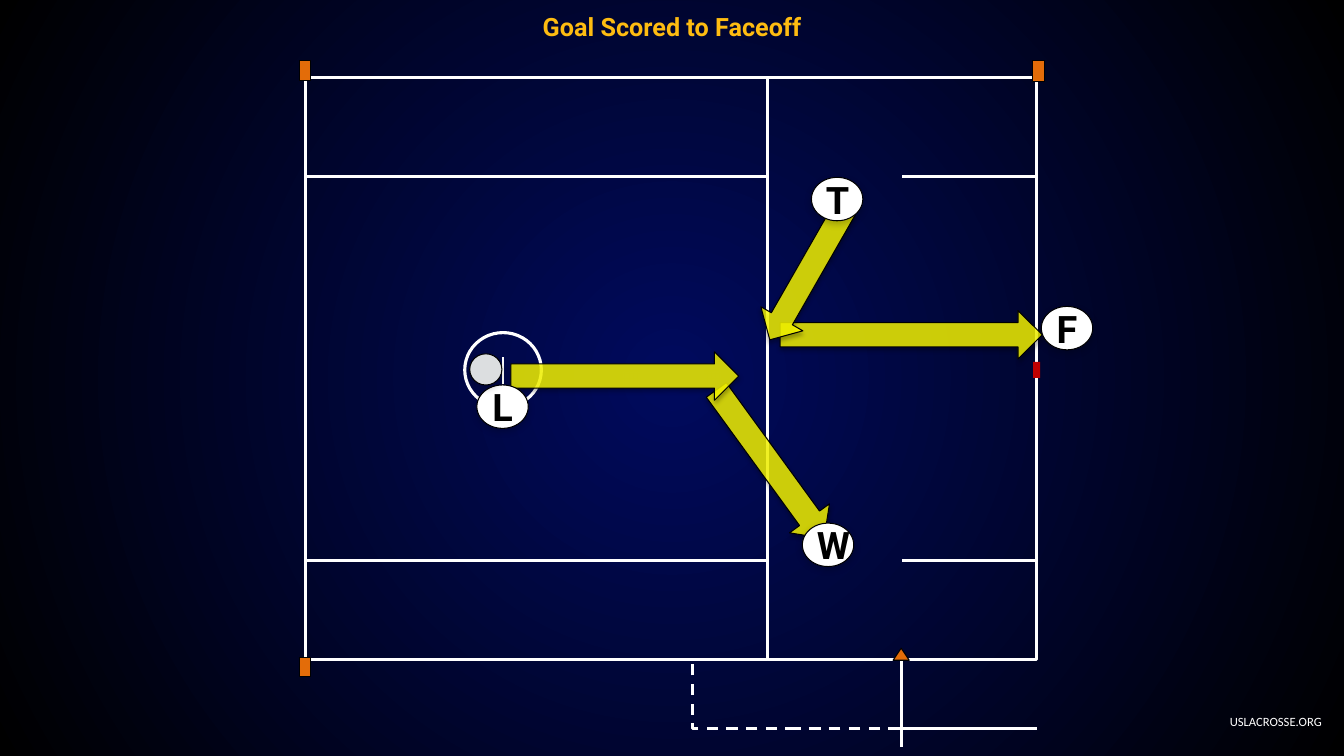
from dataclasses import dataclass
from typing import Optional

from lxml import etree
from pptx import Presentation
from pptx import util as u
from pptx.dml.color import RGBColor
from pptx.enum import dml, shapes, text
from pptx.oxml.ns import qn

Pt = u.Pt

NAVY = RGBColor(0x00, 0x0A, 0x5E)
BLACK = RGBColor(0x00, 0x00, 0x00)
WHITE = RGBColor(0xFF, 0xFF, 0xFF)
ORANGE = RGBColor(0xE3, 0x6C, 0x09)
RED = RGBColor(0xC0, 0x00, 0x00)
YELLOW = RGBColor(0xFF, 0xFF, 0x00)
GOLD = RGBColor(0xFE, 0xBC, 0x11)
GREY = RGBColor(0xDC, 0xDE, 0xE0)

RECTANGLE = shapes.MSO_SHAPE.RECTANGLE
OVAL = shapes.MSO_SHAPE.OVAL
RIGHT_ARROW = shapes.MSO_SHAPE.RIGHT_ARROW

# Field geometry in points
FIELD_LEFT, RESTRAINING_LINE, MIDLINE = 218.4, 548.4, 740.4
ROWS = (55.4, 126.1, 400.3, 470.9)
BENCH_LEFT, BENCH_RIGHT, BENCH_BOTTOM = 494.6, 643.7, 520.6


@dataclass(frozen=True)
class Box:
    left: float
    top: float
    width: float
    height: float


@dataclass(frozen=True)
class Style:
    fill: Optional[RGBColor] = None
    line: Optional[RGBColor] = None
    weight: float = 0.75


@dataclass(frozen=True)
class Shadow:
    opacity: int
    blur: float
    distance: float


@dataclass(frozen=True)
class Arrow:
    box: Box
    rotation: float = 0


@dataclass(frozen=True)
class Official:
    letter: str
    left: float
    top: float


@dataclass(frozen=True)
class Line:
    x1: float
    y1: float
    x2: float
    y2: float
    weight: float = 2.25


FIELD = Style(line=WHITE, weight=2.25)
PYLON = Style(ORANGE, BLACK)
ARROW_SHADOW = Shadow(35, 3.1, 1.8)
MARKER_SHADOW = Shadow(20, 5, 2)

FIELD_BOXES = [Box(RESTRAINING_LINE, ROWS[0], MIDLINE - RESTRAINING_LINE, ROWS[-1] - ROWS[0])] + [
    Box(FIELD_LEFT, top, RESTRAINING_LINE - FIELD_LEFT, bottom - top)
    for top, bottom in zip(ROWS, ROWS[1:])
]
PYLONS = [Box(213.8, 43.2, 8, 14.2), Box(213.8, 469.4, 8, 13.7), Box(737.3, 43.2, 8.6, 15.1)]
LINES = [
    Line(359.3, 274.3, 359.3, 254.9, 1.5),
    Line(BENCH_RIGHT, 533.5, BENCH_RIGHT, 471.6),
] + [Line(MIDLINE, y, 644.4, y) for y in (ROWS[1], ROWS[2], BENCH_BOTTOM)]
ARROWS = [
    Arrow(Box(484.6, 313.9, 131, 35.3), 54),
    Arrow(Box(557.3, 221.8, 187.2, 34.6)),
    Arrow(Box(522.7, 178.6, 108, 34.6), 119.8),
    Arrow(Box(365, 251.3, 162.7, 34.6)),
]
OFFICIALS = [
    Official("L", 340.6, 275),
    Official("T", 579.6, 126.7),
    Official("W", 573.1, 373.7),
    Official("F", 743.8, 218.9),
]


def apply_style(shape, style: Style, shadow: Optional[Shadow] = None) -> None:
    if style.fill is None:
        shape.fill.background()
    else:
        shape.fill.solid()
        shape.fill.fore_color.rgb = style.fill
    if style.line is None:
        shape.line.fill.background()
    else:
        shape.line.color.rgb = style.line
        shape.line.width = Pt(style.weight)
    shape.shadow.inherit = False
    if shadow:
        effects = shape.element.spPr.find(qn("a:effectLst"))
        outer = etree.SubElement(
            effects, qn("a:outerShdw"), blurRad=str(Pt(shadow.blur)),
            dist=str(Pt(shadow.distance)), dir="5400000", rotWithShape="0")
        color = etree.SubElement(outer, qn("a:srgbClr"), val=str(BLACK))
        etree.SubElement(color, qn("a:alpha"), val=str(shadow.opacity * 1000))


def add_box(slide, kind, box: Box, style: Style, shadow: Optional[Shadow] = None):
    shape = slide.shapes.add_shape(
        kind, Pt(box.left), Pt(box.top), Pt(box.width), Pt(box.height))
    apply_style(shape, style, shadow)
    return shape


def add_line(slide, line: Line) -> None:
    connector = slide.shapes.add_connector(
        shapes.MSO_CONNECTOR.STRAIGHT, Pt(line.x1), Pt(line.y1), Pt(line.x2), Pt(line.y2))
    connector.line.color.rgb = WHITE
    connector.line.width = Pt(line.weight)
    etree.SubElement(connector.element.spPr, qn("a:effectLst"))


def add_arrow(slide, arrow: Arrow) -> None:
    shape = add_box(slide, RIGHT_ARROW, arrow.box, Style(YELLOW, BLACK), ARROW_SHADOW)
    shape.rotation = arrow.rotation
    color = shape.element.spPr.find(qn("a:solidFill")).find(qn("a:srgbClr"))
    etree.SubElement(color, qn("a:alpha"), val="80000")


def set_text(shape, wording: str, font: str, size: float, color: RGBColor,
             align, bold: bool = False, inset: Optional[float] = None) -> None:
    frame = shape.text_frame
    frame.text = wording
    frame.word_wrap = True
    frame.auto_size = text.MSO_AUTO_SIZE.NONE
    frame.vertical_anchor = text.MSO_ANCHOR.MIDDLE
    if inset is not None:
        frame.margin_left = frame.margin_right = Pt(inset)
        frame.margin_top = frame.margin_bottom = Pt(inset)
    paragraph = frame.paragraphs[0]
    paragraph.alignment = align
    paragraph.font.name = font
    paragraph.font.size = Pt(size)
    paragraph.font.bold = bold
    paragraph.font.color.rgb = color


def set_background(slide) -> None:
    fill = slide.background.fill
    fill.gradient()
    for stop, color, position in zip(fill.gradient_stops, (NAVY, BLACK), (0, 1)):
        stop.color.rgb = color
        stop.position = position
    gradient = slide.element.find(".//" + qn("a:gradFill"))
    gradient.remove(gradient.find(qn("a:lin")))
    circle = etree.SubElement(gradient, qn("a:path"), path="circle")
    etree.SubElement(circle, qn("a:fillToRect"), dict.fromkeys("ltrb", "50000"))


def draw_field(slide) -> None:
    for box in FIELD_BOXES:
        add_box(slide, RECTANGLE, box, FIELD)
    bench = add_box(
        slide, RECTANGLE,
        Box(BENCH_LEFT, ROWS[-1], BENCH_RIGHT - BENCH_LEFT, BENCH_BOTTOM - ROWS[-1]),
        Style(line=WHITE, weight=2))
    bench.line.dash_style = dml.MSO_LINE.DASH
    add_box(slide, OVAL, Box(332, 237.6, 54.7, 53.3), FIELD)
    for line in LINES:
        add_line(slide, line)
    for box in PYLONS:
        add_box(slide, RECTANGLE, box, PYLON)
    add_box(slide, RECTANGLE, Box(738, 258.5, 5, 11.5), Style(RED))
    builder = slide.shapes.build_freeform(Pt(BENCH_RIGHT), Pt(463))
    builder.add_line_segments([(Pt(BENCH_RIGHT + dx), Pt(471.6)) for dx in (5.8, -5.8)])
    apply_style(builder.convert_to_shape(), PYLON)


def main() -> None:
    presentation = Presentation()
    presentation.slide_width, presentation.slide_height = Pt(960), Pt(540)
    slide = presentation.slides.add_slide(presentation.slide_layouts[5])
    set_background(slide)

    # Title and web address
    title = slide.shapes.title
    title.left, title.top, title.width, title.height = Pt(0), Pt(3.6), Pt(960), Pt(30.2)
    set_text(title, "Goal Scored to Faceoff", "Roboto", 18, GOLD, text.PP_ALIGN.CENTER, True)
    address = slide.shapes.add_textbox(Pt(869.8), Pt(506.2), Pt(81.4), Pt(18))
    set_text(address, "USLACROSSE.ORG", "Calibri", 9, WHITE, text.PP_ALIGN.RIGHT)

    # Field, movements, ball and officials
    draw_field(slide)
    for arrow in ARROWS:
        add_arrow(slide, arrow)
    marker = Style(WHITE, BLACK)
    for official in OFFICIALS:
        box = Box(official.left, official.top, 36.7, 31)
        shape = add_box(slide, OVAL, box, marker, MARKER_SHADOW)
        set_text(shape, official.letter, "Roboto", 27, BLACK, text.PP_ALIGN.CENTER, True, 5)
    add_box(slide, OVAL, Box(335.5, 252.7, 23, 22.3), Style(GREY, BLACK), MARKER_SHADOW)

    presentation.save("out.pptx")


if __name__ == "__main__":
    main()
